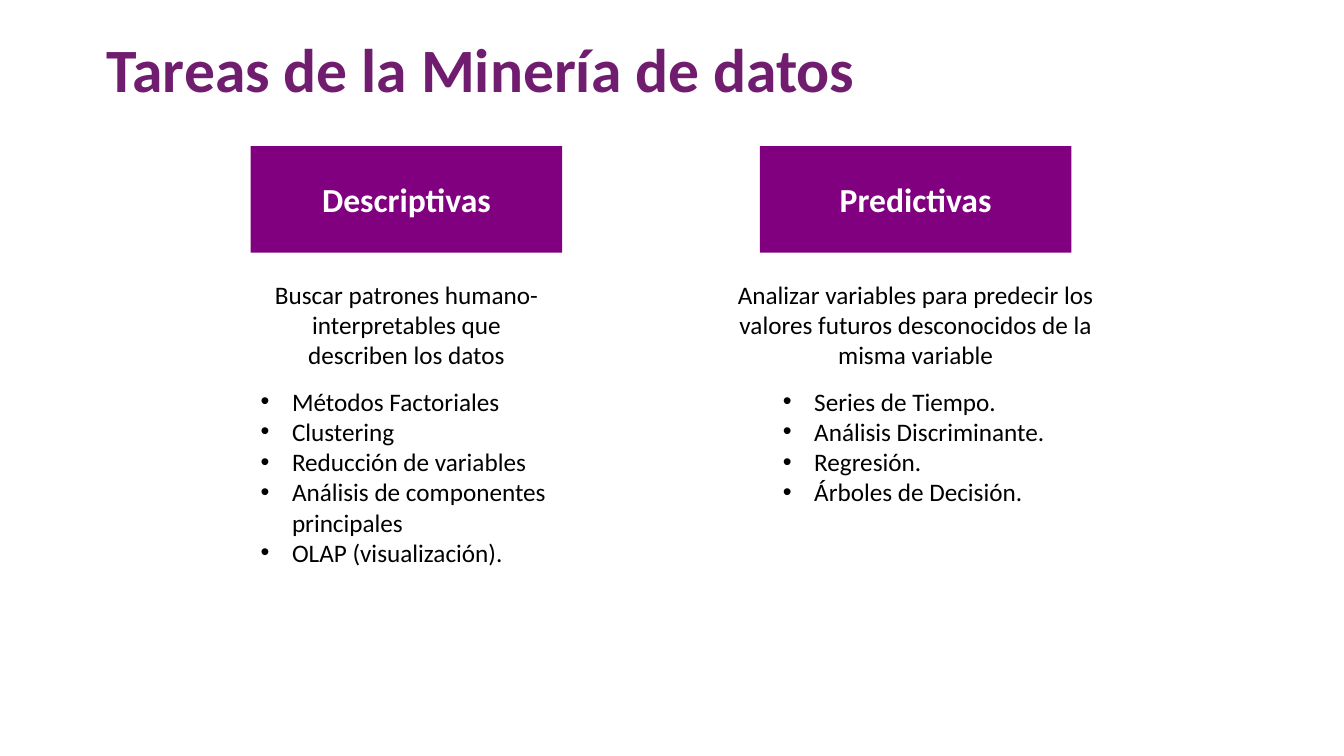
from dataclasses import dataclass

from lxml import etree
from pptx import Presentation
from pptx.dml.color import RGBColor
from pptx.enum.shapes import MSO_SHAPE
from pptx.enum.text import MSO_ANCHOR, PP_ALIGN
from pptx.oxml.ns import qn
from pptx.shapes.autoshape import Shape
from pptx.shapes.shapetree import SlideShapes
from pptx.text.text import TextFrame, _Paragraph
from pptx.util import Cm, Pt

RECTANGLE = MSO_SHAPE.RECTANGLE
LEFT, CENTER = PP_ALIGN.LEFT, PP_ALIGN.CENTER
TOP, MIDDLE = MSO_ANCHOR.TOP, MSO_ANCHOR.MIDDLE

PLUM = RGBColor(0x70, 0x1C, 0x6F)
PURPLE = RGBColor(0x80, 0x00, 0x80)
WHITE = RGBColor(0xFF, 0xFF, 0xFF)
BLACK = RGBColor(0x00, 0x00, 0x00)

TITLE_FORMAT = {"name": "Calibri", "size": Pt(44), "bold": True}
HEADING_FORMAT = {"name": "Calibri", "size": Pt(24), "bold": True}
BODY_FORMAT = {"name": "Calibri", "size": Pt(18), "bold": False}

COLUMN_WIDTH = 7.85
HEADING_TOP, HEADING_HEIGHT = 3.68, 2.69
PURPOSE_TOP, PURPOSE_HEIGHT = 6.91, 2.57
METHODS_TOP = 9.6
BULLET_INDENT = 0.79


@dataclass(frozen=True)
class TaskFamily:
    heading: str
    purpose: str
    methods: tuple[str, ...]
    left: float
    purpose_width: float
    methods_left: float
    methods_height: float


TASK_FAMILIES = (
    TaskFamily(
        "Descriptivas",
        "Buscar patrones humano-interpretables que describen los datos",
        (
            "Métodos Factoriales",
            "Clustering",
            "Reducción de variables",
            "Análisis de componentes principales",
            "OLAP (visualización).",
        ),
        left=6.32,
        purpose_width=COLUMN_WIDTH,
        methods_left=6.32,
        methods_height=4.88,
    ),
    TaskFamily(
        "Predictivas",
        "Analizar variables para predecir los valores futuros desconocidos de la misma variable",
        (
            "Series de Tiempo.",
            "Análisis Discriminante.",
            "Regresión.",
            "Árboles de Decisión.",
        ),
        left=19.15,
        purpose_width=9.83,
        methods_left=19.48,
        methods_height=3.33,
    ),
)


def add_bullet(paragraph: _Paragraph) -> None:
    properties = paragraph._p.get_or_add_pPr()
    properties.set("marL", str(Cm(BULLET_INDENT)))
    properties.set("indent", str(-Cm(BULLET_INDENT)))
    etree.SubElement(properties, qn("a:buFont"), typeface="Arial")
    etree.SubElement(properties, qn("a:buChar"), char="•")


def write_lines(
    frame: TextFrame,
    lines: tuple[str, ...],
    font_format: dict,
    color: RGBColor,
    align: PP_ALIGN = LEFT,
    anchor: MSO_ANCHOR = TOP,
    bulleted: bool = False,
) -> None:
    frame.word_wrap = True
    frame.vertical_anchor = anchor
    for index, line in enumerate(lines):
        paragraph = frame.add_paragraph() if index else frame.paragraphs[0]
        paragraph.alignment = align
        if bulleted:
            add_bullet(paragraph)
        run = paragraph.add_run()
        run.text = line
        for attribute, value in font_format.items():
            setattr(run.font, attribute, value)
        run.font.color.rgb = color


def add_text_area(
    shapes: SlideShapes, left: float, top: float, width: float, height: float
) -> TextFrame:
    return shapes.add_textbox(Cm(left), Cm(top), Cm(width), Cm(height)).text_frame


def add_heading(shapes: SlideShapes, family: TaskFamily) -> Shape:
    heading = shapes.add_shape(
        RECTANGLE, Cm(family.left), Cm(HEADING_TOP), Cm(COLUMN_WIDTH), Cm(HEADING_HEIGHT)
    )
    heading.shadow.inherit = False
    heading.fill.solid()
    heading.fill.fore_color.rgb = PURPLE
    heading.line.fill.background()
    write_lines(heading.text_frame, (family.heading,), HEADING_FORMAT, WHITE, CENTER, MIDDLE)
    return heading


def add_family(shapes: SlideShapes, family: TaskFamily) -> None:
    add_heading(shapes, family)
    purpose_left = family.left + (COLUMN_WIDTH - family.purpose_width) / 2
    purpose = add_text_area(
        shapes, purpose_left, PURPOSE_TOP, family.purpose_width, PURPOSE_HEIGHT
    )
    write_lines(purpose, (family.purpose,), BODY_FORMAT, BLACK, CENTER)
    methods = add_text_area(
        shapes, family.methods_left, METHODS_TOP, COLUMN_WIDTH, family.methods_height
    )
    write_lines(methods, family.methods, BODY_FORMAT, BLACK, bulleted=True)


def main() -> None:
    presentation = Presentation()
    presentation.slide_width = Cm(33.87)
    presentation.slide_height = Cm(19.05)
    shapes = presentation.slides.add_slide(presentation.slide_layouts[6]).shapes

    title = add_text_area(shapes, 2.44, 0, 24.56, 3.68)
    write_lines(title, ("Tareas de la Minería de datos",), TITLE_FORMAT, PLUM, anchor=MIDDLE)
    title.paragraphs[0].line_spacing = 0.9

    for family in TASK_FAMILIES:
        add_family(shapes, family)

    presentation.save("out.pptx")


if __name__ == "__main__":
    main()
